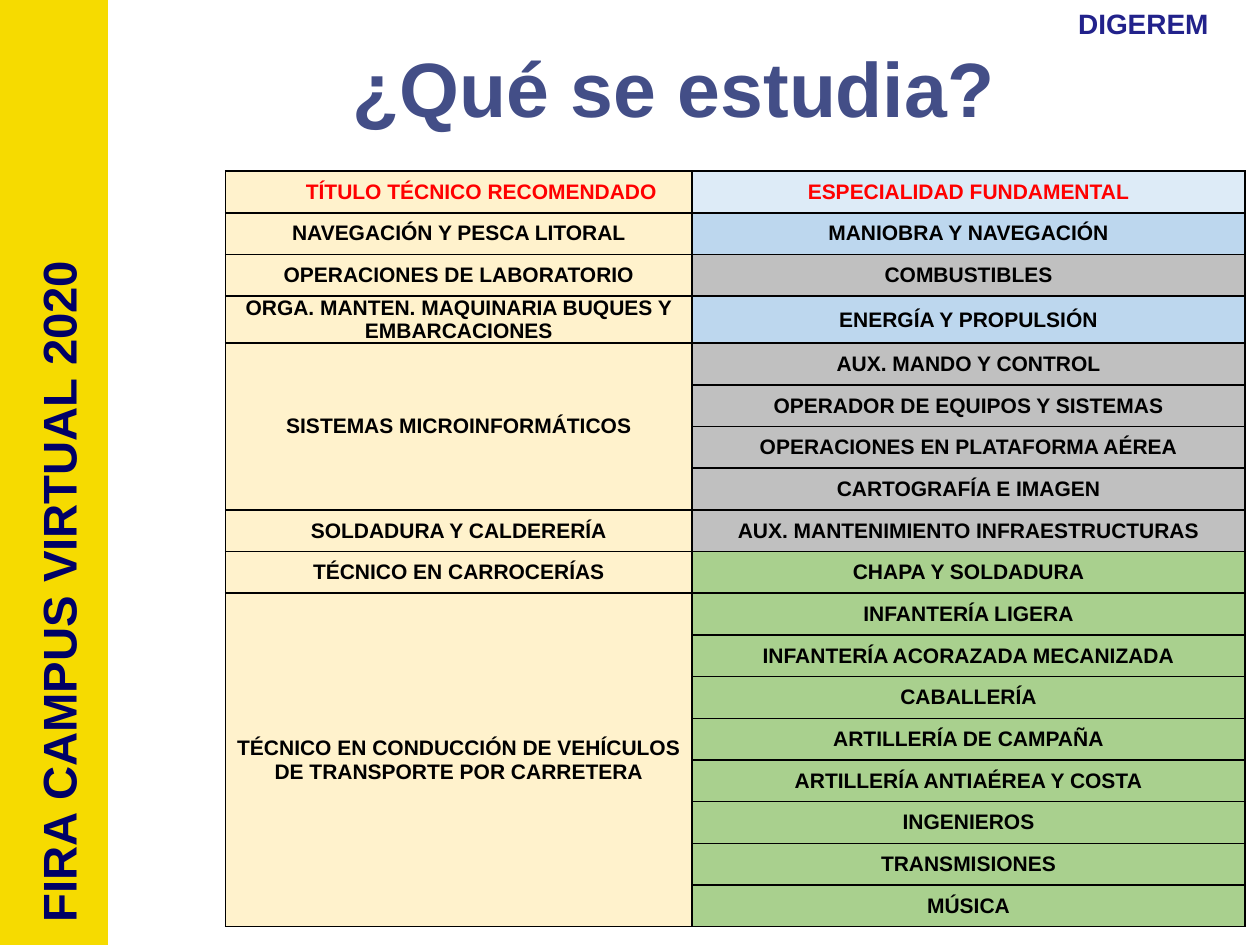
from itertools import groupby

from lxml import etree
from pptx import Presentation
from pptx.dml.color import RGBColor
from pptx.enum.shapes import MSO_SHAPE
from pptx.enum.text import MSO_ANCHOR, MSO_AUTO_SIZE, PP_ALIGN
from pptx.oxml.ns import qn
from pptx.util import Cm, Pt

RECTANGLE = MSO_SHAPE.RECTANGLE
TOP, MIDDLE = MSO_ANCHOR.TOP, MSO_ANCHOR.MIDDLE
CENTER = PP_ALIGN.CENTER
NO_AUTOFIT = MSO_AUTO_SIZE.NONE

YELLOW, BLACK, RED = "F6DB00", "000000", "FF0000"
CREAM, PALE_BLUE, BLUE, GRAY, GREEN = "FFF2CC", "DDEBF7", "BDD7EE", "C0C0C0", "A9D08E"

MICRO = "SISTEMAS MICROINFORMÁTICOS"
DRIVING = "TÉCNICO EN CONDUCCIÓN DE VEHÍCULOS DE TRANSPORTE POR CARRETERA"

# Recommended qualification, speciality, speciality fill; equal qualifications are merged
STUDIES = [
    ("TÍTULO TÉCNICO RECOMENDADO", "ESPECIALIDAD FUNDAMENTAL", PALE_BLUE),
    ("NAVEGACIÓN Y PESCA LITORAL", "MANIOBRA Y NAVEGACIÓN", BLUE),
    ("OPERACIONES DE LABORATORIO", "COMBUSTIBLES", GRAY),
    ("ORGA. MANTEN. MAQUINARIA BUQUES Y EMBARCACIONES", "ENERGÍA Y PROPULSIÓN", BLUE),
    (MICRO, "AUX. MANDO Y CONTROL", GRAY),
    (MICRO, "OPERADOR DE EQUIPOS Y SISTEMAS", GRAY),
    (MICRO, "OPERACIONES EN PLATAFORMA AÉREA", GRAY),
    (MICRO, "CARTOGRAFÍA E IMAGEN", GRAY),
    ("SOLDADURA Y CALDERERÍA", "AUX. MANTENIMIENTO INFRAESTRUCTURAS", GRAY),
    ("TÉCNICO EN CARROCERÍAS", "CHAPA Y SOLDADURA", GREEN),
    (DRIVING, "INFANTERÍA LIGERA", GREEN),
    (DRIVING, "INFANTERÍA ACORAZADA MECANIZADA", GREEN),
    (DRIVING, "CABALLERÍA", GREEN),
    (DRIVING, "ARTILLERÍA DE CAMPAÑA", GREEN),
    (DRIVING, "ARTILLERÍA ANTIAÉREA Y COSTA", GREEN),
    (DRIVING, "INGENIEROS", GREEN),
    (DRIVING, "TRANSMISIONES", GREEN),
    (DRIVING, "MÚSICA", GREEN),
]


def color(value):
    return RGBColor.from_string(value)


class SlideBuilder:
    font = "Arial"

    def __init__(self, slide):
        self.slide = slide

    def place(self, shape, left, top, width, height):
        shape.left, shape.top = Cm(left), Cm(top)
        shape.width, shape.height = Cm(width), Cm(height)

    def set_text(self, frame, text, size, text_color):
        frame.text = text
        frame.word_wrap = True
        para = frame.paragraphs[0]
        para.alignment = CENTER
        for span in para.runs:
            span.font.name = self.font
            span.font.size = Pt(size)
            span.font.bold = True
            span.font.color.rgb = color(text_color)

    def band(self, left, top, width, height, fill):
        band = self.slide.shapes.add_shape(
            RECTANGLE, Cm(left), Cm(top), Cm(width), Cm(height))
        band.shadow.inherit = False
        band.fill.solid()
        band.fill.fore_color.rgb = color(fill)
        band.line.color.rgb = color(fill)
        band.line.width = Pt(0.75)

    def title(self, text, position, size, text_color):
        title = self.slide.shapes.title
        self.place(title, *position)
        frame = title.text_frame
        self.set_text(frame, text, size, text_color)
        frame.auto_size = NO_AUTOFIT
        frame.vertical_anchor = TOP
        frame.margin_top = Cm(0.28)

    def label(self, text, position, size, text_color, rotation=0, margin_top=0.13):
        box = self.slide.shapes.add_textbox(*map(Cm, position))
        box.rotation = rotation
        box.text_frame.margin_top = Cm(margin_top)
        self.set_text(box.text_frame, text, size, text_color)

    def cell(self, cell, text, fill, text_color):
        cell.margin_left = cell.margin_right = cell.margin_top = cell.margin_bottom = 0
        cell.vertical_anchor = MIDDLE
        self.set_text(cell.text_frame, text, 12, text_color)
        self.borders(cell)
        cell.fill.solid()
        cell.fill.fore_color.rgb = color(fill)

    def borders(self, cell):
        properties = cell._tc.get_or_add_tcPr()
        for side in ("a:lnL", "a:lnR", "a:lnT", "a:lnB"):
            line = etree.SubElement(properties, qn(side), w=str(Pt(1)))
            solid = etree.SubElement(line, qn("a:solidFill"))
            etree.SubElement(solid, qn("a:srgbClr"), val=BLACK)

    def studies_table(self, rows, left, top, widths, row_height):
        frame = self.slide.shapes.add_table(
            len(rows), len(widths), Cm(left), Cm(top),
            Cm(sum(widths)), Cm(row_height * len(rows)))
        table = frame.table
        for column, width in zip(table.columns, widths):
            column.width = Cm(width)
        previous = None
        for index, (qualification, speciality, fill) in enumerate(rows):
            table.rows[index].height = Cm(row_height)
            text_color = RED if index == 0 else BLACK
            shown = "" if qualification == previous else qualification
            self.cell(table.cell(index, 0), shown, CREAM, text_color)
            self.cell(table.cell(index, 1), speciality, fill, text_color)
            previous = qualification
        table.cell(0, 0).margin_left = Cm(0.91)
        first = 0
        for _, group in groupby(rows, key=lambda row: row[0]):
            last = first + len(list(group)) - 1
            if last > first:
                table.cell(first, 0).merge(table.cell(last, 0))
            first = last + 1


def main():
    deck = Presentation()
    deck.slide_width, deck.slide_height = Cm(25.4), Cm(19.05)
    page = SlideBuilder(deck.slides.add_slide(deck.slide_layouts[5]))
    page.band(0, 0, 2.16, 19.05, YELLOW)
    page.studies_table(STUDIES, 4.55, 3.45, (9.4, 11.15), 0.84)
    page.title("¿Qué se estudia?", (5.69, 0.53, 15.8, 2.11), 44, "434E87")
    page.label("DIGEREM", (20.7, 0, 4.7, 0.94), 16, "22228B")
    page.label("FIRA CAMPUS VIRTUAL 2020", (-6.12, 11.2, 14.4, 1.45), 27, "000066",
               rotation=270, margin_top=0.24)
    deck.save("out.pptx")


if __name__ == "__main__":
    main()
